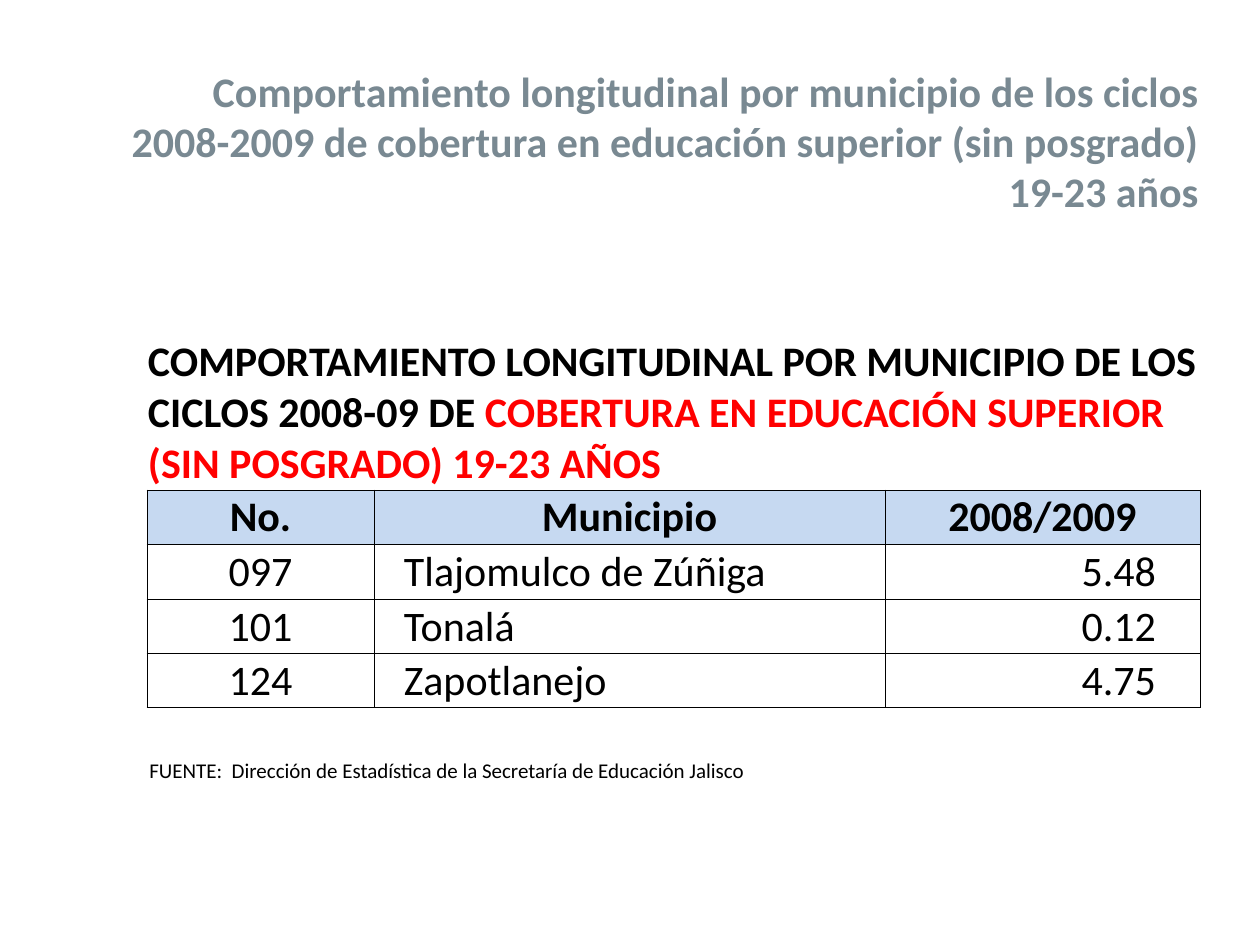
import pptx
import pptx.dml.color
import pptx.enum.text
import pptx.oxml
import pptx.oxml.ns
import pptx.util

PX = 914400 / 126
BLACK, RED, GREY, PALE_BLUE = "000000", "FF0000", "798992", "C6D9F1"
ALIGN = pptx.enum.text.PP_ALIGN
ANCHOR = pptx.enum.text.MSO_ANCHOR

COLUMN_WIDTHS = [227, 511, 315]
ROW_HEIGHTS = [263, 54, 55, 55, 54]
HEADERS = ["No.", "Municipio", "2008/2009"]
COVERAGE = [
    ["097", "Tlajomulco de Zúñiga", "5.48"],
    ["101", "Tonalá", "0.12"],
    ["124", "Zapotlanejo", "4.75"],
]
# Alignment, left inset and right inset of each column's values
COLUMN_FORMATS = [(ALIGN.CENTER, 1, 1), (ALIGN.LEFT, 30, 1), (ALIGN.RIGHT, 1, 44)]


def px(length):
    return pptx.util.Emu(round(length * PX))


def color(value):
    return pptx.dml.color.RGBColor.from_string(value)


def write(text_frame, runs, align=ALIGN.LEFT, size=24, bold=False):
    """Fill the first paragraph with (text, colour) runs."""
    paragraph = text_frame.paragraphs[0]
    paragraph.alignment = align
    font_format = {"name": "Calibri", "size": pptx.util.Pt(size), "bold": bold}
    for text, run_color in runs:
        run = paragraph.add_run()
        run.text = text
        for name, value in font_format.items():
            setattr(run.font, name, value)
        run.font.color.rgb = color(run_color)


def add_text(slide, box, runs, wrap=True, **text_format):
    text_frame = slide.shapes.add_textbox(*map(px, box)).text_frame
    text_frame.word_wrap = wrap
    text_frame.auto_size = pptx.enum.text.MSO_AUTO_SIZE.SHAPE_TO_FIT_TEXT
    write(text_frame, runs, **text_format)


def set_borders(cell, visible):
    """Draw the named sides (L, R, T, B) in black and hide the others."""
    properties = cell._tc.get_or_add_tcPr()
    for index, side in enumerate("LRTB"):
        fill = "<a:noFill/>"
        if side in visible:
            fill = f'<a:solidFill><a:srgbClr val="{BLACK}"/></a:solidFill>'
        namespace = pptx.oxml.ns.nsdecls("a")
        line = pptx.oxml.parse_xml(f'<a:ln{side} {namespace} w="6350">{fill}</a:ln{side}>')
        properties.insert(index, line)


def format_cell(cell, fill=None, borders="LRTB", left=1, right=1, anchor=ANCHOR.MIDDLE):
    cell_format = {
        "margin_left": px(left),
        "margin_right": px(right),
        "margin_top": px(1),
        "margin_bottom": 0,
        "vertical_anchor": anchor,
    }
    for name, value in cell_format.items():
        setattr(cell, name, value)
    if fill:
        cell.fill.solid()
        cell.fill.fore_color.rgb = color(fill)
    else:
        cell.fill.background()
    set_borders(cell, borders)


def add_coverage_table(slide):
    frame = slide.shapes.add_table(
        len(ROW_HEIGHTS), len(COLUMN_WIDTHS),
        px(147), px(227), px(sum(COLUMN_WIDTHS)), px(sum(ROW_HEIGHTS)),
    )
    table = frame.table
    table.first_row = table.horz_banding = False
    for column, width in zip(table.columns, COLUMN_WIDTHS):
        column.width = px(width)
    for row, height in zip(table.rows, ROW_HEIGHTS):
        row.height = px(height)

    # Caption across the top row
    caption = table.cell(0, 0)
    caption.merge(table.cell(0, 2))
    for column in range(len(COLUMN_WIDTHS)):
        format_cell(table.cell(0, column), borders="B", anchor=ANCHOR.BOTTOM)
    write(caption.text_frame, [
        ("COMPORTAMIENTO LONGITUDINAL POR MUNICIPIO DE LOS CICLOS 2008-09 DE", BLACK),
        (" COBERTURA EN EDUCACIÓN SUPERIOR (SIN POSGRADO) 19-23 AÑOS", RED),
    ], bold=True)

    # Column headers
    for column, header in enumerate(HEADERS):
        cell = table.cell(1, column)
        format_cell(cell, fill=PALE_BLUE)
        write(cell.text_frame, [(header, BLACK)], align=ALIGN.CENTER, bold=True)

    # Values by municipality
    for row, values in enumerate(COVERAGE, start=2):
        for column, (value, column_format) in enumerate(zip(values, COLUMN_FORMATS)):
            align, left, right = column_format
            cell = table.cell(row, column)
            format_cell(cell, left=left, right=right)
            write(cell.text_frame, [(value, BLACK)], align=align)


def main():
    presentation = pptx.Presentation()
    presentation.slide_width, presentation.slide_height = px(1260), px(945)
    slide = presentation.slides.add_slide(presentation.slide_layouts[6])

    add_coverage_table(slide)

    # Source note
    source = "FUENTE:  Dirección de Estadística de la Secretaría de Educación Jalisco"
    add_text(slide, (137, 751, 629, 38), [(source, BLACK)], wrap=False, size=12)

    # Slide title
    title = ("Comportamiento longitudinal por municipio de los ciclos 2008-2009 "
             "de cobertura en educación superior (sin posgrado) 19-23 años")
    add_text(slide, (108, 59, 1103, 165), [(title, GREY)], align=ALIGN.RIGHT, bold=True)

    presentation.save("out.pptx")


if __name__ == "__main__":
    main()
